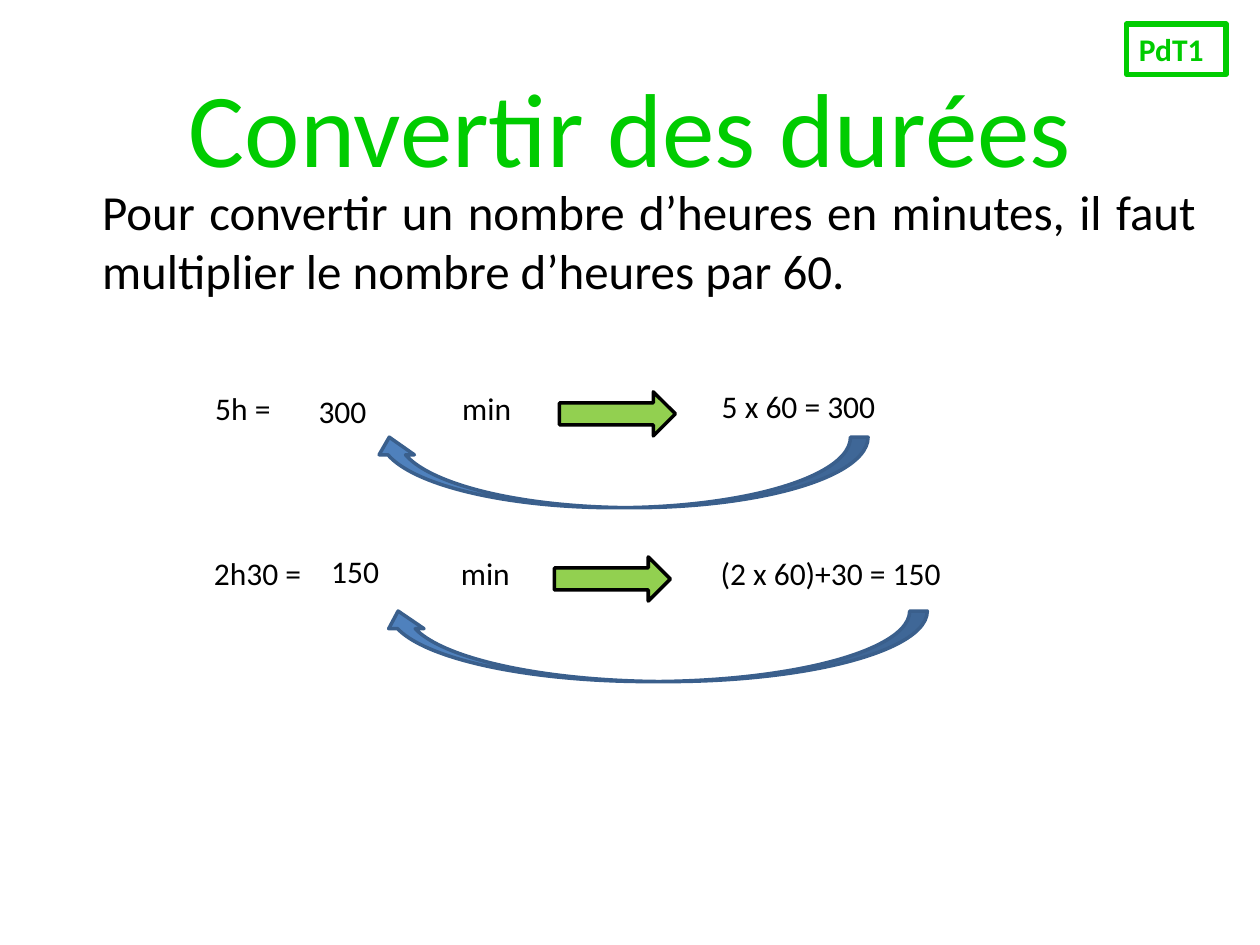
from pptx import Presentation
from pptx.dml.color import RGBColor
from pptx.enum.shapes import MSO_SHAPE as Preset
from pptx.enum.text import MSO_ANCHOR as Anchor, PP_ALIGN as Align
from pptx.util import Inches, Pt

GREEN = RGBColor(0x00, 0xCC, 0x00)
BLACK = RGBColor(0x00, 0x00, 0x00)
LIME = RGBColor(0x92, 0xD0, 0x50)
BLUE = RGBColor(0x4F, 0x81, 0xBD)
NAVY = RGBColor(0x3A, 0x5F, 0x8C)
FONT = "Calibri"
COLUMNS, ROWS = 100, 75
CELL = Inches(0.1)


def cells(box):
    return [round(value * CELL) for value in box]


def inside(box, left, top, width, height):
    return box[0] + left, box[1] + top, width, height


def set_values(target, values):
    for name, value in values.items():
        setattr(target, name, value)


def write(shape, text, size=18, color=BLACK, bold=False, align=Align.LEFT, **frame_format):
    frame = shape.text_frame
    set_values(frame, {"word_wrap": True, "vertical_anchor": Anchor.TOP, **frame_format})
    paragraph = frame.paragraphs[0]
    paragraph.alignment = align
    run = paragraph.add_run()
    run.text = text
    set_values(run.font, {"name": FONT, "size": Pt(size), "bold": bold})
    run.font.color.rgb = color


def add_text(slide, box, text, **text_format):
    write(slide.shapes.add_textbox(*cells(box)), text, **text_format)


def add_preset(slide, preset, box, fill, line, weight):
    shape = slide.shapes.add_shape(preset, *cells(box))
    shape.shadow.inherit = False
    if fill is None:
        shape.fill.background()
    else:
        shape.fill.solid()
        shape.fill.fore_color.rgb = fill
    shape.line.color.rgb = line
    shape.line.width = Pt(weight)
    return shape


def add_heading(slide, box):
    add_text(slide, inside(box, 0, 0, 90, 14), "Convertir des durées", size=60,
             color=GREEN, align=Align.CENTER, vertical_anchor=Anchor.MIDDLE)
    add_text(slide, inside(box, 0.9, 10.9, 90, 11),
             "Pour convertir un nombre d’heures en minutes, "
             "il faut multiplier le nombre d’heures par 60.",
             size=28, align=Align.JUSTIFY, margin_left=Inches(0.22))


def add_conversion(slide, box, duration, result, formula, arrow_left, curve):
    result_text, result_left, result_top = result
    formula_text, formula_top, formula_width = formula
    curve_left, curve_top, curve_width = curve
    add_text(slide, inside(box, 0, 0, 10, 4), duration)
    add_text(slide, inside(box, 19.6, 0, 7, 4), "min")
    add_preset(slide, Preset.RIGHT_ARROW, inside(box, arrow_left, 0.7, 9.2, 3.5),
               LIME, BLACK, 2)
    add_text(slide, inside(box, 40.2, formula_top, formula_width, 4), formula_text)
    curved_arrow = add_preset(slide, Preset.CURVED_UP_ARROW,
                              inside(box, curve_left, curve_top, curve_width, 5.6),
                              BLUE, NAVY, 2)
    curved_arrow.element.spPr.get_or_add_xfrm().set("flipH", "1")
    add_text(slide, inside(box, result_left, result_top, 9.4, 4), result_text)


def add_badge(slide, box):
    badge = add_preset(slide, Preset.RECTANGLE, box, None, GREEN, 3)
    write(badge, "PdT1", color=GREEN, bold=True)


def main():
    presentation = Presentation()
    set_values(presentation, {"slide_width": COLUMNS * CELL, "slide_height": ROWS * CELL})
    slide = presentation.slides.add_slide(presentation.slide_layouts[6])
    add_heading(slide, (5, 3))
    add_conversion(slide, (16.1, 30.4), "5h =", ("300", 8.2, 0.2),
                   ("5 x 60 = 300", -0.2, 17.3), 28.3, (13.4, 4.3, 39.4))
    add_conversion(slide, (16, 43.5), "2h30 =", ("150", 9.3, -0.2),
                   ("(2 x 60)+30 = 150", 0, 24.8), 28, (14.2, 5, 43.4))
    add_badge(slide, (89.4, 1.9, 7.9, 4))
    presentation.save("out.pptx")


if __name__ == "__main__":
    main()
